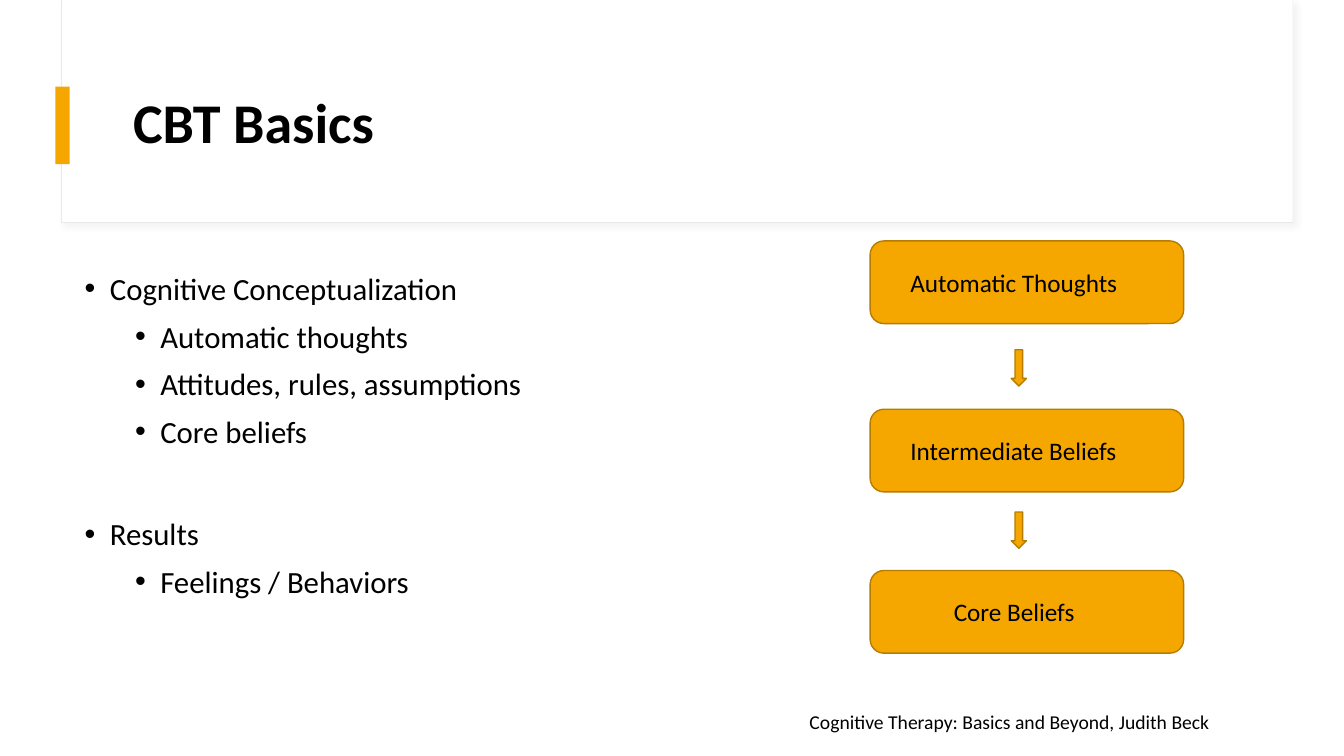
from lxml import etree
from pptx import Presentation
from pptx.dml.color import RGBColor
from pptx.enum.shapes import MSO_SHAPE as SHAPE
from pptx.enum.text import MSO_ANCHOR as ANCHOR, MSO_AUTO_SIZE as AUTO, PP_ALIGN as ALIGN
from pptx.oxml import parse_xml
from pptx.oxml.ns import nsdecls, qn
from pptx.util import Inches, Pt

GOLD, BROWN, BLACK = "F5A700", "B57C00", "000000"


def write(p, text, size=18, bold=False, color=BLACK, spacing=None, before=None):
    p.alignment = ALIGN.LEFT
    p.line_spacing = spacing
    if before is not None:
        p.space_before = Pt(before)
    r = p.add_run()
    r.text = text
    r.font.name = "Calibri"
    r.font.size = Pt(size)
    r.font.bold = bold
    r.font.color.rgb = RGBColor.from_string(color)


def add_box(kind, x, y, w, h, fill, line=None, width=1):
    sp = s.shapes.add_shape(kind, Inches(x), Inches(y), Inches(w), Inches(h))
    sp.shadow.inherit = False
    sp.fill.solid()
    sp.fill.fore_color.rgb = RGBColor.from_string(fill)
    if line:
        sp.line.color.rgb = RGBColor.from_string(line)
        sp.line.width = Pt(width)
    else:
        sp.line.fill.background()
    return sp


prs = Presentation()
prs.slide_width, prs.slide_height = Inches(13.33), Inches(7.5)
s = prs.slides.add_slide(prs.slide_layouts[1])
title, body = s.placeholders

card = add_box(SHAPE.RECTANGLE, 0.61, 0, 12.21, 2.21, "FFFFFF", "E9E9E9", 0.75)
effects = card._element.spPr.find(qn("a:effectLst"))
effects.append(parse_xml(
    f'<a:outerShdw {nsdecls("a")} blurRad="50800" dist="38100" dir="2700000" algn="tl" rotWithShape="0">'
    '<a:srgbClr val="D9D9D9"><a:alpha val="30000"/></a:srgbClr></a:outerShdw>'))
add_box(SHAPE.RECTANGLE, 0.62, 0, 12.2, 2.2, "FFFFFF")
add_box(SHAPE.RECTANGLE, 0.55, 0.86, 0.14, 0.77, GOLD)

for sp, box in [(title, (1.22, 0.6, 11.12, 1.29)), (body, (0.74, 2.59, 11.12, 4.04))]:
    s.shapes._spTree.append(sp._element)
    sp.left, sp.top, sp.width, sp.height = [Inches(v) for v in box]
    sp.text_frame.auto_size = AUTO.NONE
    sp.text_frame.word_wrap = True

title.text_frame.vertical_anchor = ANCHOR.MIDDLE
write(title.text_frame.paragraphs[0], "CBT Basics", size=40, bold=True, spacing=0.9)

outline = [
    ("Cognitive Conceptualization", 0, 10),
    ("Automatic thoughts", 1, 5),
    ("Attitudes, rules, assumptions", 1, 5),
    ("Core beliefs", 1, 5),
    ("Results", 0, 44),
    ("Feelings / Behaviors", 1, 5),
]
tf = body.text_frame
tf.vertical_anchor = ANCHOR.TOP
for i, (text, level, before) in enumerate(outline):
    p = tf.add_paragraph() if i else tf.paragraphs[0]
    p.level = level
    write(p, text, size=22, spacing=1.1, before=before)
    pPr = p._p.get_or_add_pPr()
    pPr.set("marL", str(Inches(0.25 + 0.5 * level)))
    pPr.set("indent", str(Inches(-0.25)))
    etree.SubElement(pPr, qn("a:buFont")).set("typeface", "Arial")
    etree.SubElement(pPr, qn("a:buChar")).set("char", "•")

for text, y, inset in [("Automatic Thoughts", 2.39, 0.36),
                       ("Intermediate Beliefs", 4.06, 0.36),
                       ("Core Beliefs", 5.66, 0.79)]:
    sp = add_box(SHAPE.ROUNDED_RECTANGLE, 8.63, y, 3.11, 0.82, GOLD, BROWN)
    tf = sp.text_frame
    tf.margin_left = Inches(inset)
    tf.vertical_anchor = ANCHOR.MIDDLE
    write(tf.paragraphs[0], text)

for y in (3.47, 5.08):
    add_box(SHAPE.DOWN_ARROW, 10.03, y, 0.15, 0.36, GOLD, BROWN)

source = s.shapes.add_textbox(Inches(7.93), Inches(6.99), Inches(4.69), Inches(0.34))
source.text_frame.word_wrap = True
write(source.text_frame.paragraphs[0], "Cognitive Therapy: Basics and Beyond, Judith Beck", size=14)

prs.save("out.pptx")
